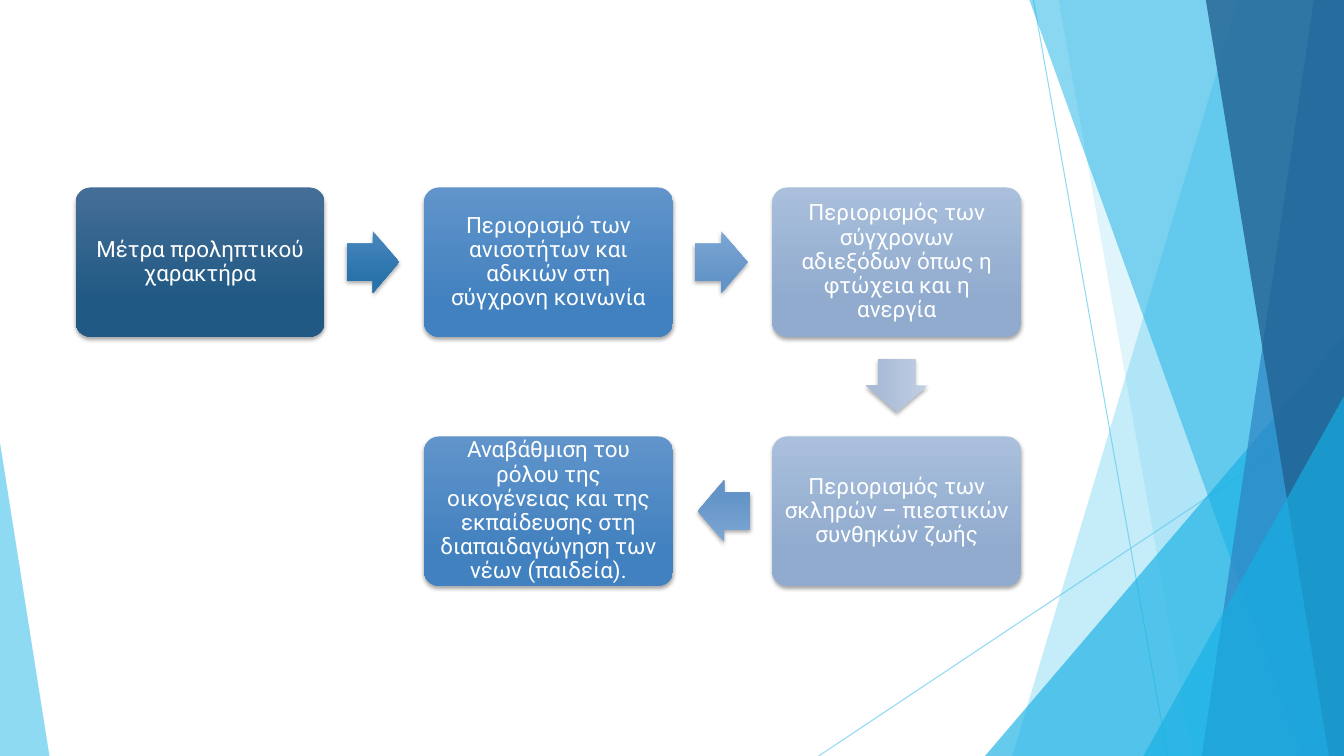
import math
import pptx
import pptx.util
import pptx.dml.color
import pptx.enum.shapes
import pptx.enum.text
import pptx.oxml
import pptx.oxml.ns

Inches = pptx.util.Inches
Kind = pptx.enum.shapes.MSO_SHAPE
qn = pptx.oxml.ns.qn

DARK, MID, PALE = ("456E97", "1F5984"), ("6094CB", "4281BF"), ("A9BFDC", "90ABCE")
STEPS = [
    (0, 0, DARK, "Μέτρα προληπτικού χαρακτήρα"),
    (1, 0, MID, "Περιορισμό των ανισοτήτων και αδικιών στη σύγχρονη κοινωνία"),
    (2, 0, PALE, "Περιορισμός των σύγχρονων αδιεξόδων όπως η φτώχεια και η ανεργία"),
    (2, 1, PALE, "Περιορισμός των σκληρών – πιεστικών συνθηκών ζωής"),
    (1, 1, MID, "Αναβάθμιση του ρόλου της οικογένειας και της εκπαίδευσης στη "
                "διαπαιδαγώγηση των νέων (παιδεία)."),
]
HOPS = [("4986BE", "2873AA"), ("7DA6D4", "6294C7"), ("C2D0E5", "A9BBD6"), ("7DA6D4", "6294C7")]


def color(text):
    return pptx.dml.color.RGBColor.from_string(text)


def fade(shape, part, alpha):
    tint = next(part.iter(qn("a:srgbClr")))
    tint.append(pptx.oxml.parse_xml(
        f'<a:alpha {pptx.oxml.ns.nsdecls("a")} val="{alpha * 1000}"/>'))


def paint(shape, tone, alpha):
    shape.shadow.inherit = False
    shape.fill.solid()
    shape.fill.fore_color.rgb = color(tone)
    shape.line.fill.background()
    fade(shape, shape.fill._xPr.find(qn("a:solidFill")), alpha)


def blend(shape, tones):
    shape.fill.gradient()
    shape.fill.gradient_angle = 270
    for stop, tone, place in zip(shape.fill.gradient_stops, tones, (0, 0.78)):
        stop.color.rgb = color(tone)
        stop.position = place
    shape.line.fill.background()
    shape.shadow.inherit = False
    glow = shape.element.spPr.find(qn("a:effectLst"))
    glow.append(pptx.oxml.parse_xml(
        f'<a:outerShdw {pptx.oxml.ns.nsdecls("a")} blurRad="38100" dist="25400" '
        'dir="5400000" rotWithShape="0"><a:srgbClr val="000000">'
        '<a:alpha val="35000"/></a:srgbClr></a:outerShdw>'))


def draw_ray(slide, start, end):
    ray = slide.shapes.add_connector(
        pptx.enum.shapes.MSO_CONNECTOR.STRAIGHT, *map(Inches, start + end))
    ray.line.width = pptx.util.Pt(0.75)
    ray.line.color.rgb = color("5FCBEF")
    fade(ray, ray.line._ln, 70)
    ray.element.spPr.append(pptx.oxml.parse_xml(
        f'<a:effectLst {pptx.oxml.ns.nsdecls("a")}/>'))


def draw_band(slide, box, top, base, tone, alpha):
    left, head, wide, high = box
    right, foot = left + wide, head + high
    pen = slide.shapes.build_freeform(Inches(top), Inches(head))
    spots = [(right, head), (right, foot), (base, foot)]
    pen.add_line_segments([(Inches(x), Inches(y)) for x, y in spots], close=True)
    paint(pen.convert_to_shape(), tone, alpha)


def draw_wedge(slide, box, peak, tone, alpha):
    wedge = slide.shapes.add_shape(Kind.ISOSCELES_TRIANGLE, *map(Inches, box))
    wedge.adjustments[0] = peak
    paint(wedge, tone, alpha)


def draw_decor(slide, box):
    left, top, wide, high = box
    right, foot = left + wide, top + high
    draw_ray(slide, (10.25, top), (11.58, foot))
    draw_ray(slide, (right, 4.03), (8.12, foot))
    draw_band(slide, box, 12.28, 10.04, "5FCBEF", 36)
    draw_band(slide, box, 10.5, 11.83, "5FCBEF", 20)
    draw_wedge(slide, (right - 3.56, foot - 4.17, 3.56, 4.17), 1, "17B0E4", 66)
    draw_band(slide, box, 10.21, 12.91, "17B0E4", 50)
    draw_band(slide, box, 13.03, 11.92, "2E83C3", 70)
    draw_band(slide, box, 11.96, 13.18, "226292", 80)
    draw_wedge(slide, (right - 1.99, foot - 3.57, 1.99, 3.57), 1, "17B0E4", 66)
    draw_wedge(slide, (left, foot - 3.11, 0.49, 3.11), 0, "5FCBEF", 70)


def draw_step(slide, box, tones, text):
    card = slide.shapes.add_shape(Kind.ROUNDED_RECTANGLE, *map(Inches, box))
    card.adjustments[0] = 0.1
    blend(card, tones)
    frame = card.text_frame
    frame.word_wrap = True
    frame.vertical_anchor = pptx.enum.text.MSO_ANCHOR.MIDDLE
    frame.margin_left = frame.margin_right = Inches(0.07)
    frame.margin_top = frame.margin_bottom = Inches(0.07)
    para = frame.paragraphs[0]
    para.alignment = pptx.enum.text.PP_ALIGN.CENTER
    para.line_spacing = 0.9
    run = para.add_run()
    run.text = text
    run.font.name = "Roboto"
    run.font.size = pptx.util.Pt(16)
    run.font.color.rgb = color("FFFFFF")


def draw_hop(slide, start, end, tones):
    wide, high = 0.52, 0.61
    x, y = (a + (b - a) * 0.496 for a, b in zip(start, end))
    arrow = slide.shapes.add_shape(
        Kind.RIGHT_ARROW, Inches(x - wide / 2), Inches(y - high / 2),
        Inches(wide), Inches(high))
    arrow.adjustments[0] = 0.6
    arrow.adjustments[1] = 0.5
    arrow.rotation = math.degrees(math.atan2(end[1] - start[1], end[0] - start[0]))
    blend(arrow, tones)


def draw_flow(slide, box):
    left, top, wide, high = box
    card_w, card_h = 2.47, 1.48
    gap_x, gap_y = (wide - card_w) / 2, high - card_h
    mids = []
    for col, row, tones, text in STEPS:
        x, y = left + col * gap_x, top + row * gap_y
        draw_step(slide, (x, y, card_w, card_h), tones, text)
        mids.append((x + card_w / 2, y + card_h / 2))
    for start, end, tones in zip(mids, mids[1:], HOPS):
        draw_hop(slide, start, end, tones)


def main():
    deck = pptx.Presentation()
    deck.slide_width, deck.slide_height = Inches(13.33), Inches(7.5)
    slide = deck.slides.add_slide(deck.slide_layouts[6])
    draw_decor(slide, (0, 0, 13.33, 7.5))
    draw_flow(slide, (0.75, 1.86, 9.38, 3.95))
    deck.save("out.pptx")


if __name__ == "__main__":
    main()
